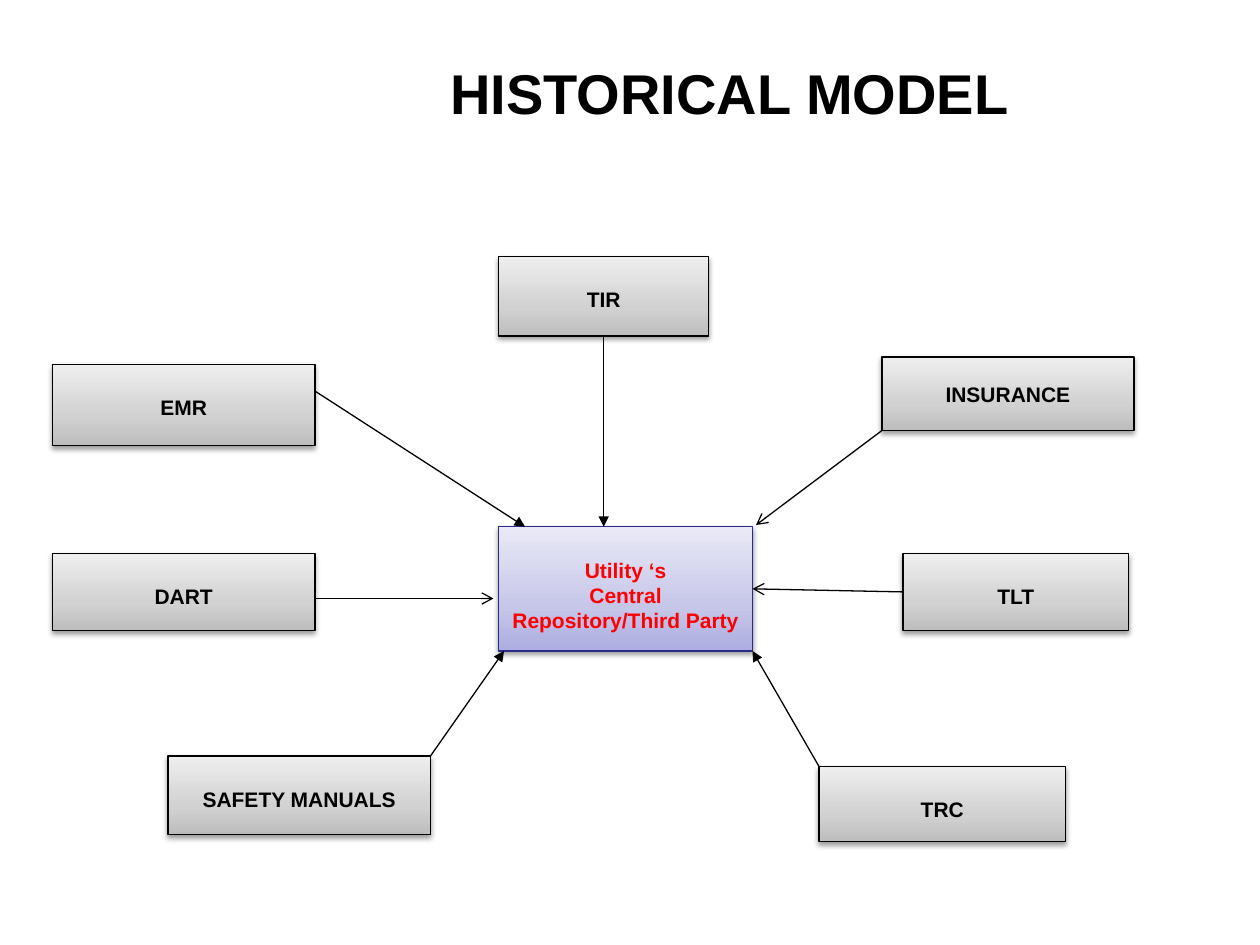
from copy import deepcopy

from lxml import etree
from pptx import Presentation
from pptx.dml.color import RGBColor
from pptx.enum import shapes, text
from pptx.oxml.ns import qn
from pptx.util import Pt

BLACK = RGBColor(0x00, 0x00, 0x00)
RED = RGBColor(0xFF, 0x00, 0x00)
NAVY = RGBColor(0x2A, 0x2A, 0x89)
GREYS = [RGBColor(0xBD, 0xBD, 0xBD), RGBColor(0xD1, 0xD1, 0xD1), RGBColor(0xEE, 0xEE, 0xEE)]
LILACS = [RGBColor(0xAD, 0xAD, 0xE1), RGBColor(0xC6, 0xC6, 0xE9), RGBColor(0xE9, 0xE9, 0xF7)]
STOP_POSITIONS = [0, 0.35, 1]


def write_lines(frame, lines, size, color):
    for number, line in enumerate(lines):
        paragraph = frame.paragraphs[0] if number == 0 else frame.add_paragraph()
        paragraph.alignment = text.PP_ALIGN.CENTER
        run = paragraph.add_run()
        run.text = line
        run.font.name = "Arial"
        run.font.size = Pt(size)
        run.font.bold = True
        run.font.color.rgb = color


def style_box(shape, colors, line_color):
    """Give the box an upward three-stop gradient, a thin outline and a soft shadow."""
    shape.fill.gradient()
    shape.fill.gradient_angle = 90
    stop_list = shape._element.spPr.find(".//" + qn("a:gsLst"))
    stop_list.append(deepcopy(stop_list[-1]))
    for stop, position, color in zip(shape.fill.gradient_stops, STOP_POSITIONS, colors):
        stop.position = position
        stop.color.rgb = color
    shape.line.color.rgb = line_color
    shape.line.width = Pt(0.75)
    shape.shadow.inherit = False
    effects = shape._element.spPr.find(qn("a:effectLst"))
    shadow = etree.SubElement(effects, qn("a:outerShdw"), blurRad=str(Pt(3.1)),
                              dist=str(Pt(1.6)), dir="5400000", rotWithShape="0")
    shadow_color = etree.SubElement(shadow, qn("a:srgbClr"), val=str(BLACK))
    etree.SubElement(shadow_color, qn("a:alpha"), val="38000")


presentation = Presentation()
presentation.slide_width = Pt(720)
presentation.slide_height = Pt(540)
slide = presentation.slides.add_slide(presentation.slide_layouts[6])

# Boxes: lines of text, left, top, width, height
HUB = "Utility ‘s"
boxes = [
    (["TIR"], 285, 146.5, 120, 45.5),
    ([HUB, "Central", "Repository/Third Party"], 285, 301, 145, 71),
    (["DART"], 30, 316.25, 150, 44),
    (["TLT"], 516, 316.25, 129, 44),
    (["TRC"], 468, 438, 141, 43),
    (["EMR"], 30, 208.25, 150, 46.25),
    (["SAFETY MANUALS"], 96, 432, 150, 45),
    (["INSURANCE"], 504, 204, 144, 42),
]
box_by_name = {}
for lines, left, top, width, height in boxes:
    name = lines[0]
    shape = slide.shapes.add_shape(shapes.MSO_SHAPE.RECTANGLE,
                                   Pt(left), Pt(top), Pt(width), Pt(height))
    is_hub = name == HUB
    style_box(shape, LILACS if is_hub else GREYS, NAVY if is_hub else BLACK)
    frame = shape.text_frame
    frame.word_wrap = False
    if name == "INSURANCE":
        frame.vertical_anchor = text.MSO_ANCHOR.MIDDLE
    else:
        frame.vertical_anchor = text.MSO_ANCHOR.TOP
        frame.margin_top = Pt(17.4)
    write_lines(frame, lines, 12, RED if is_hub else BLACK)
    box_by_name[name] = shape

# Arrows: start, end, head, joined start (box, side), joined end (box, side)
arrows = [
    ((345, 192), (345, 301), "triangle", ("TIR", 2), None),
    ((468, 438), (430, 372), "triangle", None, None),
    ((180, 223.5), (300, 301), "triangle", None, None),
    ((246, 432), (288, 372), "triangle", None, None),
    ((504, 246), (432, 300), "arrow", None, None),
    ((516, 338), (430, 336.5), "arrow", ("TLT", 1), (HUB, 3)),
    ((180, 342), (282, 342), "arrow", None, None),
]
for start, end, head, joined_start, joined_end in arrows:
    connector = slide.shapes.add_connector(shapes.MSO_CONNECTOR.STRAIGHT,
                                           *map(Pt, start + end))
    if joined_start:
        connector.begin_connect(box_by_name[joined_start[0]], joined_start[1])
    if joined_end:
        connector.end_connect(box_by_name[joined_end[0]], joined_end[1])
    connector.line.color.rgb = BLACK
    connector.line.width = Pt(0.75)
    etree.SubElement(connector.line._get_or_add_ln(), qn("a:tailEnd"), type=head)
    etree.SubElement(connector._element.spPr, qn("a:effectLst"))

title = slide.shapes.add_textbox(Pt(234), Pt(30), Pt(366), Pt(45.5))
title.text_frame.word_wrap = True
write_lines(title.text_frame, ["HISTORICAL MODEL"], 32, BLACK)

presentation.save("out.pptx")
